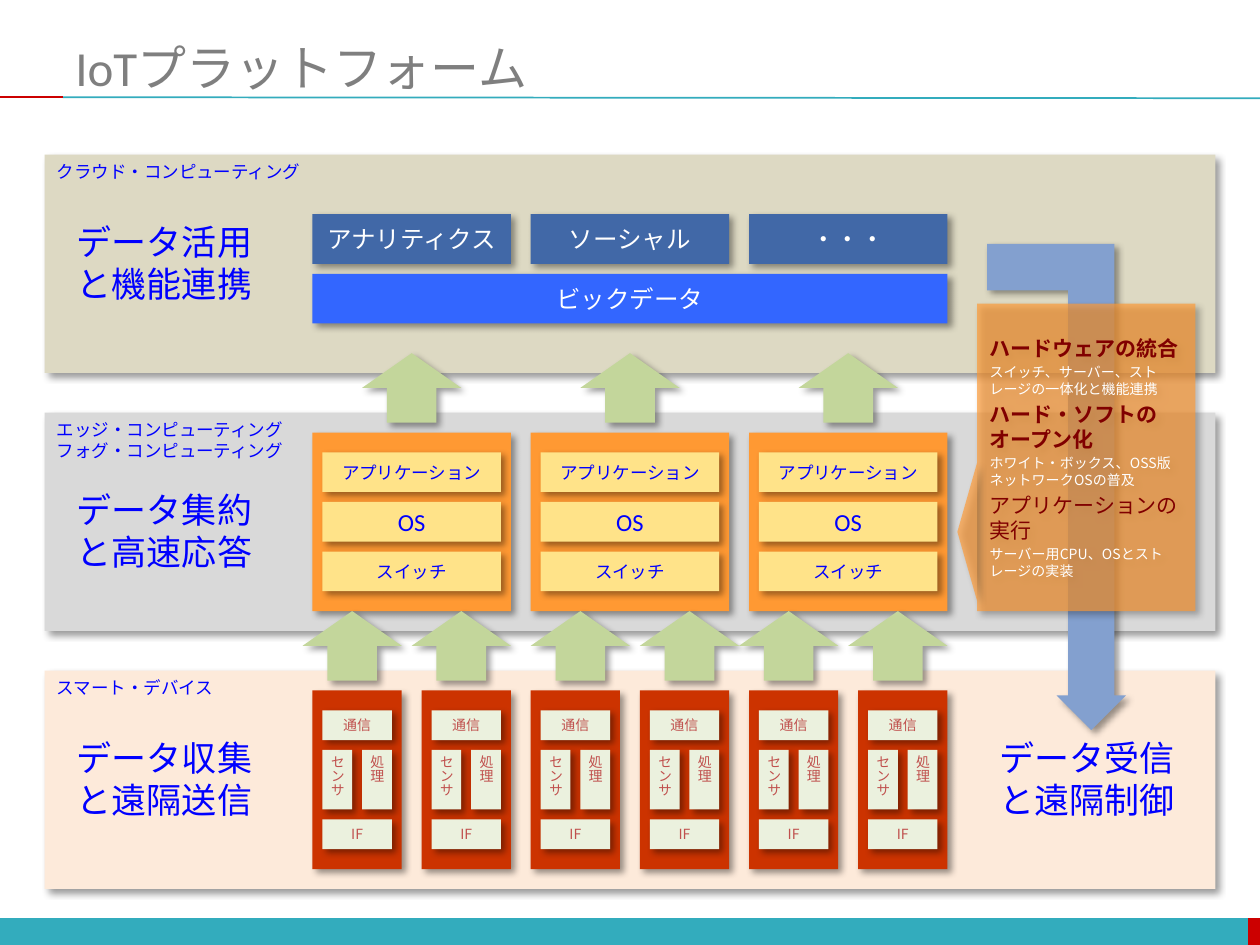
import pptx
import pptx.util
import pptx.dml.color
import pptx.enum.shapes
import pptx.enum.text
import pptx.oxml
import pptx.oxml.ns
from lxml import etree

U = pptx.util.Mm(2)
SHAPE = pptx.enum.shapes.MSO_SHAPE
ANCHOR = pptx.enum.text.MSO_ANCHOR
ALIGN = pptx.enum.text.PP_ALIGN
rgb = pptx.dml.color.RGBColor.from_string
qn = pptx.oxml.ns.qn
CJK = "Noto Sans CJK JP"
BLUE = "0000FF"
SHADOW = (
    '<a:outerShdw xmlns:a="http://schemas.openxmlformats.org/drawingml/2006/main" '
    'blurRad="50800" dist="38100" dir="2700000" algn="tl" rotWithShape="0">'
    '<a:srgbClr val="000000"><a:alpha val="40000"/></a:srgbClr></a:outerShdw>'
)

prs = pptx.Presentation()
prs.slide_width = 127 * U
prs.slide_height = pptx.util.Inches(7.5)
s = prs.slides.add_slide(prs.slide_layouts[6])


def add_box(kind, x, y, w, h, fill=None, alpha=None, shadow=True):
    pos = [round(v * U) for v in (x, y, w, h)]
    if kind is None:
        return s.shapes.add_textbox(*pos)
    sp = s.shapes.add_shape(kind, *pos)
    sp.fill.solid()
    sp.fill.fore_color.rgb = rgb(fill)
    sp.line.fill.background()
    sp.shadow.inherit = False
    spPr = sp._element.spPr
    if shadow:
        spPr.find(qn("a:effectLst")).append(pptx.oxml.parse_xml(SHADOW))
    if alpha:
        clr = spPr.find(qn("a:solidFill")).find(qn("a:srgbClr"))
        etree.SubElement(clr, qn("a:alpha")).set("val", str(alpha * 1000))
    return sp


def add_text(sp, paras, align=ALIGN.LEFT, anchor=ANCHOR.MIDDLE, wrap=True, font=CJK, gap=0, vert=None):
    tf = sp.text_frame
    tf.word_wrap = wrap
    tf.vertical_anchor = anchor
    if vert:
        tf._txBody.bodyPr.set("vert", vert)
        tf.margin_left = tf.margin_right = tf.margin_top = tf.margin_bottom = pptx.util.Inches(0.04)
    for i, (text, size, color, bold) in enumerate(paras):
        p = tf.add_paragraph() if i else tf.paragraphs[0]
        p.alignment = align
        p.line_spacing = pptx.util.Pt(round(size * 1.2, 1))
        if i and gap:
            p.space_before = pptx.util.Pt(size * gap)
        r = p.add_run()
        r.text = text
        r.font.name = font
        r.font.size = pptx.util.Pt(size)
        r.font.bold = bold
        r.font.color.rgb = rgb(color)
        etree.SubElement(r._r.get_or_add_rPr(), qn("a:ea")).set("typeface", CJK)


for x, w, color in [(0, 125.8, "33ACBD"), (125.8, 1.2, "CC0000")]:
    add_box(SHAPE.RECTANGLE, x, 92.55, w, 2.7, color, shadow=False)
for x1, x2, y2, color in [(6.35, 127, 9.9, "33ACBD"), (0, 6.35, 9.8, "CC0000")]:
    ln = s.shapes.add_connector(
        pptx.enum.shapes.MSO_CONNECTOR.STRAIGHT,
        round(x1 * U), round(9.8 * U), round(x2 * U), round(y2 * U))
    ln.line.color.rgb = rgb(color)
    ln.line.width = pptx.util.Pt(1)
    etree.SubElement(ln._element.spPr, qn("a:effectLst"))

title = add_box(None, 6.35, 3.8, 120.65, 5.85)
add_text(title, [("IoTプラットフォーム", 28, "7F7F7F", False)], font="Calibri")

bands = [
    (15.6, 22, "DDD9C3", ["クラウド・コンピューティング"], 21.6, ["データ活用", "と機能連携"]),
    (41.6, 22, "D9D9D9", ["エッジ・コンピューティング", "フォグ・コンピューティング"], 48.6, ["データ集約", "と高速応答"]),
    (67.6, 22, "FDEADA", ["スマート・デバイス"], 73.6, ["データ収集", "と遠隔送信"]),
]
headings = []
for y, h, color, labels, heading_y, heading in bands:
    add_box(SHAPE.RECTANGLE, 4.5, y, 118, h, color)
    label = add_box(None, 4.5, y, 27, 2 + 2.1 * len(labels))
    add_text(label, [(t, 10, BLUE, False) for t in labels], anchor=ANCHOR.TOP, wrap=False)
    headings.append((6.5, heading_y, heading))
headings.append((99.5, 73.6, ["データ受信", "と遠隔制御"]))
for x, y, lines in headings:
    heading = add_box(None, x, y, 20.3, 9.8)
    add_text(heading, [(t, 20, BLUE, False) for t in lines], anchor=ANCHOR.TOP, wrap=False)

services = [(31.5 + 22 * i, 21.6, 20, "4168A7", t) for i, t in enumerate(["アナリティクス", "ソーシャル", "・・・"])]
services.append((31.5, 27.6, 64, "3366FF", "ビックデータ"))
for x, y, w, color, text in services:
    sp = add_box(SHAPE.RECTANGLE, x, y, w, 5, color)
    add_text(sp, [(text, 14, "FFFFFF", False)], ALIGN.CENTER)

layers = [("アプリケーション", 10, CJK), ("OS", 14, "Calibri"), ("スイッチ", 10, CJK)]
for col in range(3):
    x = 31.5 + 22 * col
    add_box(SHAPE.RECTANGLE, x, 43.6, 20, 18, "FF9933")
    for row, (text, size, font) in enumerate(layers):
        sp = add_box(SHAPE.RECTANGLE, x + 1, 45.6 + 5 * row, 18, 4, "FFE389")
        add_text(sp, [(text, size, BLUE, False)], ALIGN.CENTER, font=font)

parts = [
    ("通信", 0, 71.6, 7, 3, ALIGN.CENTER, None),
    ("センサ", 0, 75.6, 3, 6, ALIGN.LEFT, "eaVert"),
    ("処理", 4, 75.6, 3, 6, ALIGN.LEFT, "eaVert"),
    ("IF", 0, 82.6, 7, 3, ALIGN.CENTER, None),
]
for col in range(6):
    x = 31.5 + 11 * col
    add_box(SHAPE.RECTANGLE, x, 69.6, 9, 18, "CC3300")
    for text, dx, y, w, h, align, vert in parts:
        sp = add_box(SHAPE.RECTANGLE, x + 1 + dx, y, w, h, "EBF1DE")
        add_text(sp, [(text, 8, "C0504D", False)], align, vert=vert)

arrows = [(x, 61.6) for x in (30.5, 41.5, 53.5, 64.5, 74.5, 85.5)]
arrows += [(36.5 + 22 * i, 35.6) for i in range(3)]
for x, y in arrows:
    add_box(SHAPE.UP_ARROW, x, y, 10, 7, "C3D69B")

feedback = add_box(SHAPE.BENT_UP_ARROW, 99.5, 24.6, 14, 49, "83A0CF")
feedback.adjustments[0] = 0.334
feedback._element.spPr.find(qn("a:xfrm")).set("flipV", "1")

callout = add_box(SHAPE.RECTANGLE, 98.5, 30.6, 22, 31, "FF9933", alpha=67)
trends = [
    ("ハードウェアの統合", True, "スイッチ、サーバー、ストレージの一体化と機能連携"),
    ("ハード・ソフトのオープン化", True, "ホワイト・ボックス、OSS版ネットワークOSの普及"),
    ("アプリケーションの実行", False, "サーバー用CPU、OSとストレージの実装"),
]
paras = []
for head, bold, detail in trends:
    paras += [(head, 12, "800000", bold), (detail, 8, "FFFFFF", False)]
add_text(callout, paras, gap=0.2)
pointer = add_box(SHAPE.ISOSCELES_TRIANGLE, 90.5, 52.6, 14, 2, "FF9933", alpha=67)
pointer.rotation = 270

prs.save("out.pptx")
